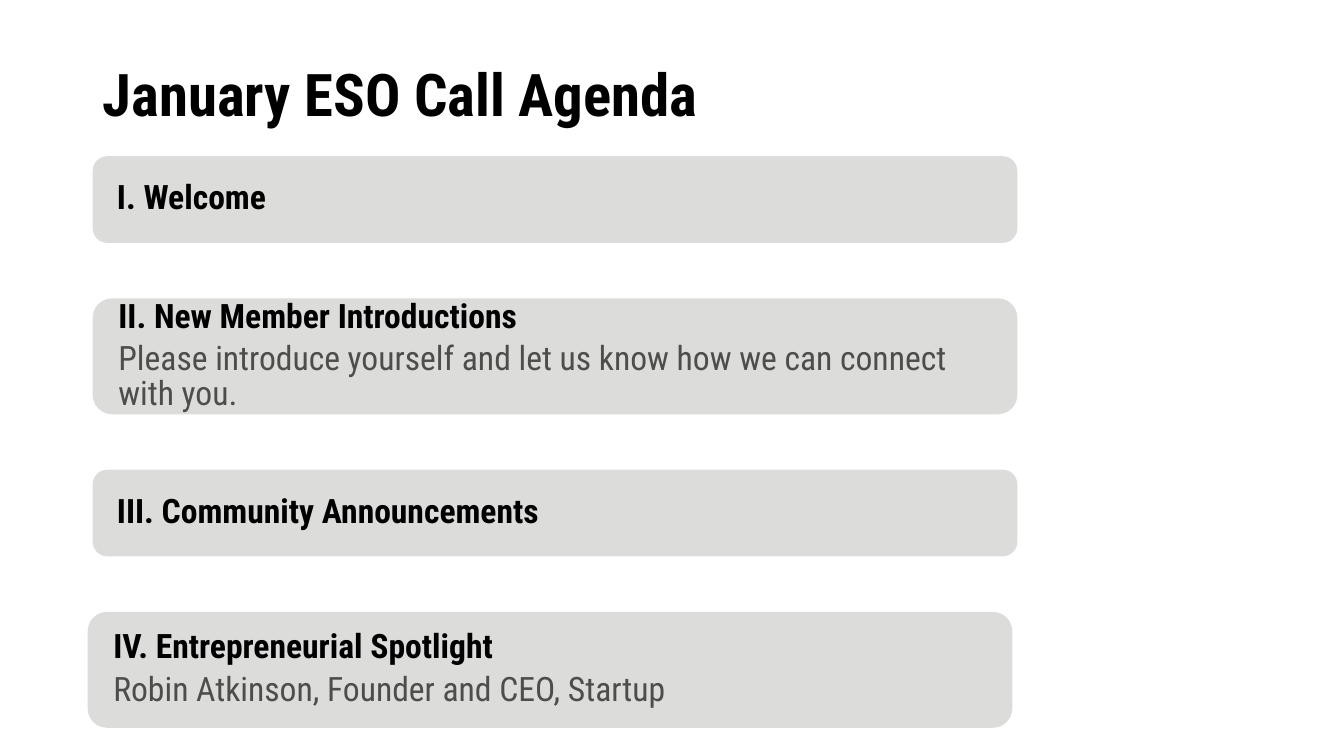
from pptx import Presentation
from pptx.dml.color import RGBColor
from pptx.enum.shapes import MSO_SHAPE as Shape
from pptx.enum.text import MSO_ANCHOR as Anchor, MSO_AUTO_SIZE as Fit, PP_ALIGN as Align
from pptx.util import Inches, Pt

BLACK = RGBColor(0x00, 0x00, 0x00)
GRAY = RGBColor(0x4D, 0x4D, 0x4C)
PANEL = RGBColor(0xDC, 0xDC, 0xDB)
FACE = "Roboto Condensed"

LEFT, TOP, WIDTH, GAP = 0.92, 1.55, 9.17, 0.55
LOW, TALL = 0.86, 1.15

# Left edge, heading, detail
ITEMS = [
    (LEFT, "I. Welcome", None),
    (LEFT, "II. New Member Introductions",
     "Please introduce yourself and let us know how we can connect with you."),
    (LEFT, "III. Community Announcements", None),
    (LEFT - 0.05, "IV. Entrepreneurial Spotlight",
     "Robin Atkinson, Founder and CEO, Startup"),
]

HEAD = {"name": FACE, "size": Pt(24), "bold": True}
BODY = {**HEAD, "bold": False}
TITLE = {**HEAD, "size": Pt(42)}
FRAME = {"word_wrap": True, "auto_size": Fit.NONE, "vertical_anchor": Anchor.MIDDLE}
PARA = {"alignment": Align.LEFT, "line_spacing": 0.85, "space_after": Pt(6)}


def apply(target, values):
    for key, value in values.items():
        setattr(target, key, value)


def write(para, text, font, color, form):
    apply(para, form)
    run = para.add_run()
    run.text = text
    apply(run.font, font)
    run.font.color.rgb = color


def add_title(slide, text):
    title = slide.shapes.title
    apply(title, {"left": Inches(0.92), "top": Inches(0.24),
                  "width": Inches(11.5), "height": Inches(1.45)})
    frame = title.text_frame
    apply(frame, FRAME)
    write(frame.paragraphs[0], text, TITLE, BLACK,
          {"alignment": Align.LEFT, "line_spacing": 0.9})


def add_item(slide, left, top, height, head, detail):
    box = slide.shapes.add_shape(Shape.ROUNDED_RECTANGLE, Inches(left), Inches(top),
                                 Inches(WIDTH), Inches(height))
    box.shadow.inherit = False
    box.fill.solid()
    box.fill.fore_color.rgb = PANEL
    box.line.fill.background()
    frame = box.text_frame
    apply(frame, FRAME)
    for side in ("left", "top", "right", "bottom"):
        setattr(frame, f"margin_{side}", Inches(0.1))
    paras = [frame.paragraphs[0]]
    write(paras[0], head, HEAD, BLACK, PARA)
    if detail:
        paras.append(frame.add_paragraph())
        write(paras[1], detail, BODY, GRAY, PARA)
    for para in paras:
        para._p.get_or_add_pPr().set("marL", str(Inches(0.1)))


def main():
    deck = Presentation()
    deck.slide_width, deck.slide_height = Inches(13.33), Inches(7.5)
    slide = deck.slides.add_slide(deck.slide_layouts[5])

    # Heading
    add_title(slide, "January ESO Call Agenda")

    # Agenda panels, stacked with equal gaps
    top = TOP
    for left, head, detail in ITEMS:
        height = TALL if detail else LOW
        add_item(slide, left, top, height, head, detail)
        top += height + GAP

    deck.save("out.pptx")


if __name__ == "__main__":
    main()
